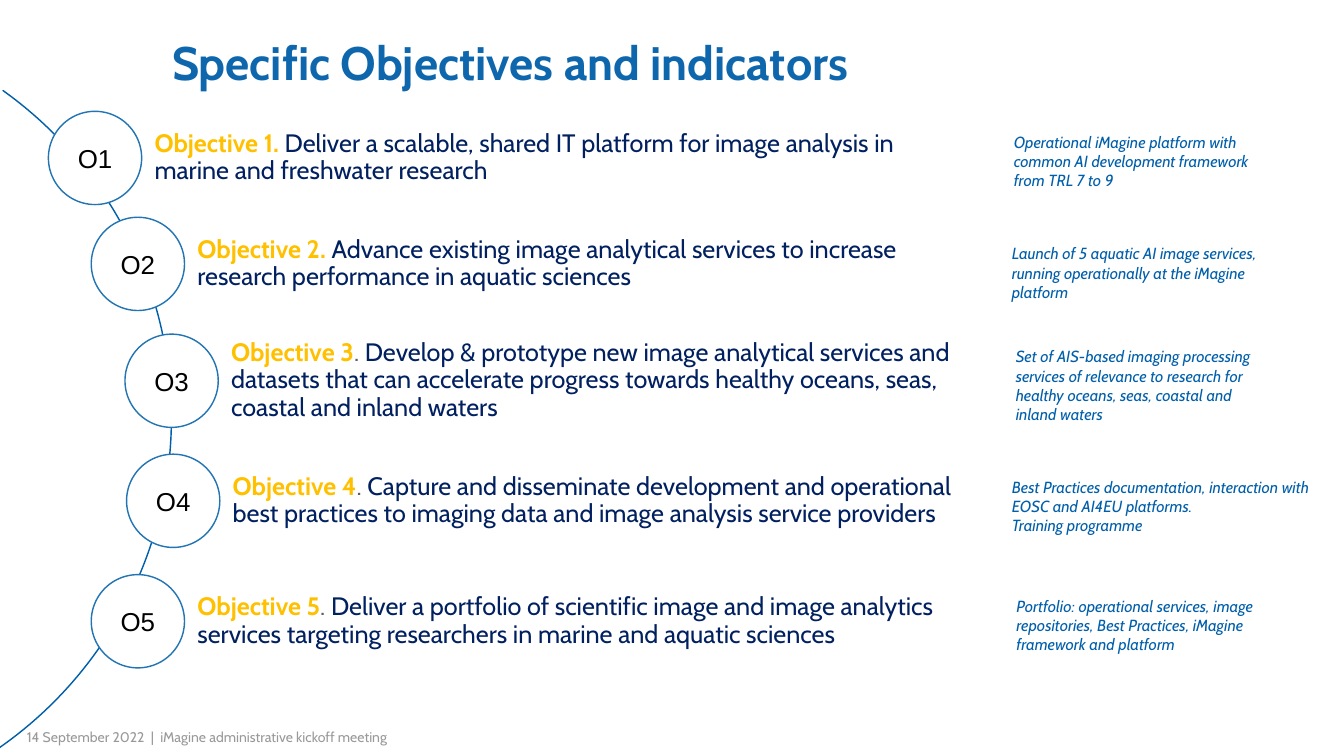
from pptx import Presentation
from pptx.dml.color import RGBColor
from pptx.enum.shapes import MSO_SHAPE
from pptx.enum.text import MSO_ANCHOR, MSO_AUTO_SIZE, PP_ALIGN
from pptx.util import Cm, Pt

TITLE_BLUE = RGBColor(0x0E, 0x67, 0xAD)
INDICATOR_BLUE = RGBColor(0x00, 0x5F, 0xAA)
RING_BLUE = RGBColor(0x23, 0x74, 0xB3)
NAVY = RGBColor(0x00, 0x20, 0x60)
YELLOW = RGBColor(0xFF, 0xC0, 0x00)
DARK_GREY = RGBColor(0x5E, 0x5E, 0x5E)
LIGHT_GREY = RGBColor(0x99, 0x99, 0x99)
BLACK = RGBColor(0, 0, 0)
WHITE = RGBColor(0xFF, 0xFF, 0xFF)

DIAMETER = 4.7

# circle left, circle top, heading, separator, separator colour, text
OBJECTIVES = [
    (2.44, 5.61, "Objective 1.", " ", NAVY,
     "Deliver a scalable, shared IT platform for image analysis in marine and freshwater research"),
    (4.6, 10.95, "Objective 2.", " ", NAVY,
     "Advance existing image analytical services to increase research performance in aquatic sciences"),
    (6.3, 16.84, "Objective 3", ". ", DARK_GREY,
     "Develop & prototype new image analytical services and datasets that can accelerate "
     "progress towards healthy oceans, seas, coastal and inland waters"),
    (6.38, 22.89, "Objective 4", ". ", DARK_GREY,
     "Capture and disseminate development and operational best practices to imaging data "
     "and image analysis service providers"),
    (4.6, 28.96, "Objective 5", ". ", DARK_GREY,
     "Deliver a portfolio of scientific image and image analytics services targeting "
     "researchers in marine and aquatic sciences"),
]

# left, top, width, height, left inset, paragraphs
INDICATORS = [
    (50.6, 6.4, 14.05, 3.43, 0.5,
     ["Operational iMagine platform with common AI development framework from TRL 7 to 9"]),
    (50.75, 12.04, 14.05, 3.43, 0.25,
     ["Launch of 5 aquatic AI image services, running operationally at the iMagine platform"]),
    (50.95, 17.22, 13.03, 5.36, 0.25,
     ["Set of AIS-based imaging processing services of relevance to research for healthy "
      "oceans, seas, coastal and inland waters"]),
    (51, 23.8, 16.43, 4.39, 0,
     ["Best Practices documentation, interaction with EOSC and AI4EU platforms.",
      "Training programme"]),
    (50.98, 29.79, 15.39, 3.43, 0.25,
     ["Portfolio: operational services, image repositories, Best Practices, iMagine "
      "framework and platform"]),
]


def add_run(paragraph, text, size, color, name="Cabin", bold=False, italic=False):
    run = paragraph.add_run()
    run.text = text
    font = run.font
    font.size, font.name, font.bold, font.italic = Pt(size), name, bold, italic
    font.color.rgb = color


def set_frame(frame, insets, anchor=MSO_ANCHOR.TOP):
    """Wrap the text, with insets in cm as left, top, right, bottom."""
    frame.word_wrap = True
    frame.auto_size = MSO_AUTO_SIZE.NONE
    frame.vertical_anchor = anchor
    (frame.margin_left, frame.margin_top,
     frame.margin_right, frame.margin_bottom) = map(Cm, insets)


class ObjectivesSlide:
    def __init__(self, presentation):
        self.slide = presentation.slides.add_slide(presentation.slide_layouts[5])
        self.shapes = self.slide.shapes

    def title(self, text):
        title = self.shapes.title
        title.left, title.top, title.width, title.height = map(Cm, (7.98, 1.68, 58.5, 2.29))
        set_frame(title.text_frame, (0.69, 0.33, 0.69, 0.33))
        paragraph = title.text_frame.paragraphs[0]
        paragraph.alignment = PP_ALIGN.LEFT
        paragraph.line_spacing = 0.9
        add_run(paragraph, text, 67, TITLE_BLUE, bold=True)

    def text_box(self, box, insets, anchor=MSO_ANCHOR.TOP):
        frame = self.shapes.add_textbox(*map(Cm, box)).text_frame
        set_frame(frame, insets, anchor)
        return frame

    def footer(self, text):
        frame = self.text_box((1.35, 36.73, 26.82, 0.84), (0, 0, 0, 0), MSO_ANCHOR.BOTTOM)
        add_run(frame.paragraphs[0], text, 20, LIGHT_GREY)

    def outline(self, preset, box, color):
        shape = self.shapes.add_shape(preset, *map(Cm, box))
        shape.shadow.inherit = False
        shape.line.color.rgb = color
        shape.line.width = Pt(2)
        return shape

    def arc(self):
        arc = self.outline(MSO_SHAPE.BLOCK_ARC, (-31.9, 0.79, 40.54, 40.54), INDICATOR_BLUE)
        arc.fill.background()
        for index, value in enumerate((183.32, 33.2, 0)):
            arc.adjustments[index] = value

    def circle(self, left, top, label):
        circle = self.outline(MSO_SHAPE.OVAL, (left, top, DIAMETER, DIAMETER), RING_BLUE)
        circle.fill.solid()
        circle.fill.fore_color.rgb = WHITE
        set_frame(circle.text_frame, (0.69,) * 4, MSO_ANCHOR.MIDDLE)
        paragraph = circle.text_frame.paragraphs[0]
        paragraph.alignment = PP_ALIGN.CENTER
        add_run(paragraph, label, 37, BLACK, name="Arial")

    def objective(self, number, left, top, heading, separator, separator_color, text):
        box = (left + DIAMETER / 2, top + DIAMETER / 10, 41.88, DIAMETER * 0.8)
        frame = self.text_box(box, (3, 0.2, 0.2, 0.2), MSO_ANCHOR.MIDDLE)
        paragraph = frame.paragraphs[0]
        paragraph.line_spacing = 0.9
        add_run(paragraph, heading, 36, YELLOW, bold=True)
        add_run(paragraph, separator, 36, separator_color)
        add_run(paragraph, text, 36, NAVY)
        self.circle(left, top, f"O{number}")

    def indicator(self, left, top, width, height, inset, texts):
        frame = self.text_box((left, top, width, height), (inset, 0.25, 0.25, 0.25))
        for index, text in enumerate(texts):
            paragraph = frame.add_paragraph() if index else frame.paragraphs[0]
            add_run(paragraph, text, 23, INDICATOR_BLUE, italic=True)


def main():
    presentation = Presentation()
    presentation.slide_width, presentation.slide_height = Cm(67.74), Cm(38.1)
    page = ObjectivesSlide(presentation)
    page.footer("14 September 2022  |  iMagine administrative kickoff meeting")
    page.title("Specific Objectives and indicators")
    page.arc()
    for number, objective in enumerate(OBJECTIVES, start=1):
        page.objective(number, *objective)
    for indicator in INDICATORS:
        page.indicator(*indicator)
    presentation.save("out.pptx")


if __name__ == "__main__":
    main()
